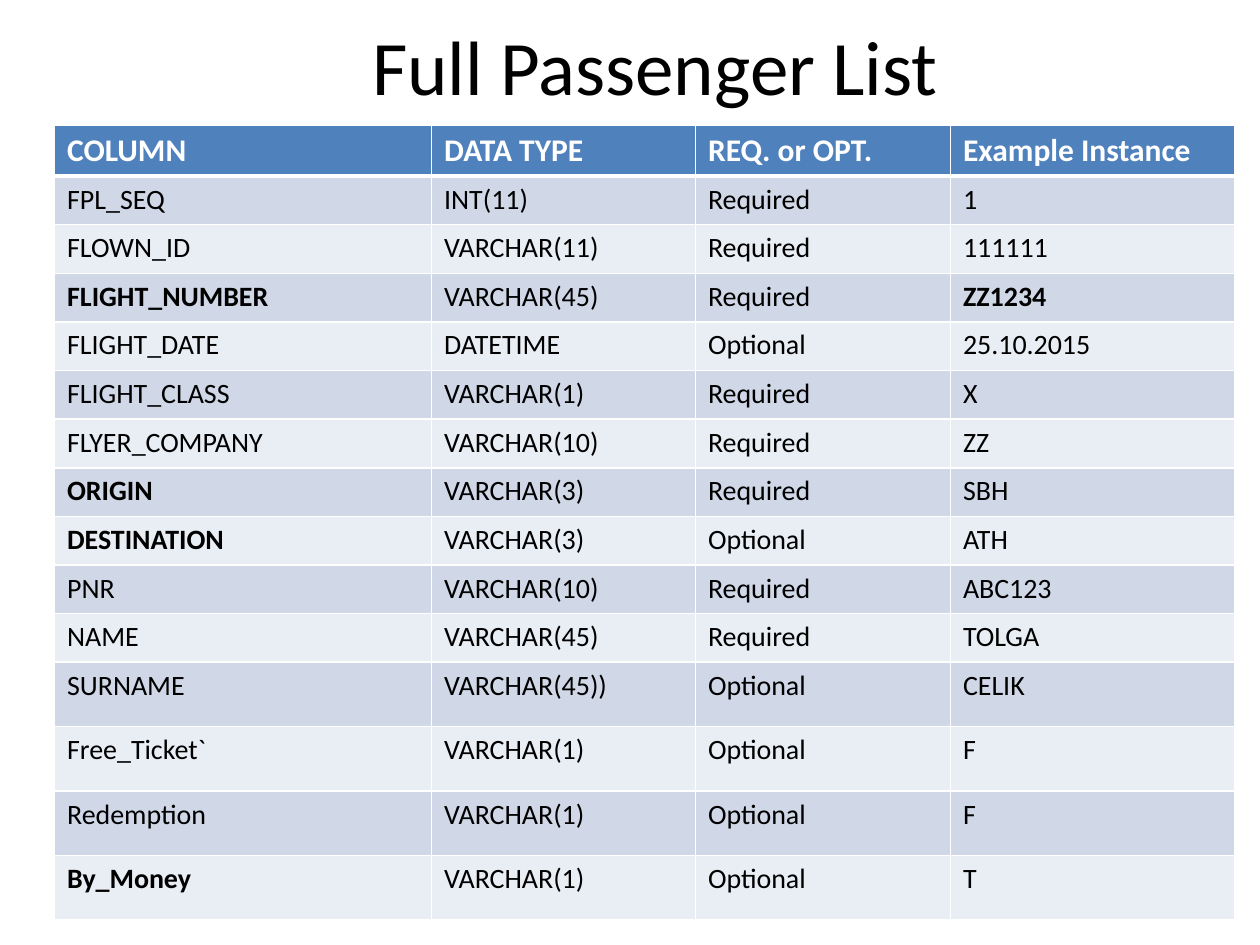
from collections import namedtuple
from dataclasses import dataclass

from lxml import etree
from pptx import Presentation
from pptx.dml.color import RGBColor
from pptx.enum import text
from pptx.oxml import ns
from pptx.util import Cm, Pt

Box = namedtuple("Box", "left top width height")


@dataclass(frozen=True)
class Theme:
    font: str = "Calibri"
    ink: RGBColor = RGBColor(0, 0, 0)
    paper: RGBColor = RGBColor(255, 255, 255)
    header: RGBColor = RGBColor.from_string("4F81BD")
    bands: tuple = (RGBColor.from_string("E9EDF4"), RGBColor.from_string("D0D8E8"))
    title_size: Pt = Pt(44)
    header_size: Pt = Pt(18)
    body_size: Pt = Pt(16)
    header_rule: Pt = Pt(3)


THEME = Theme()
TITLE_BOX = Box(Cm(2.49), Cm(0), Cm(21.44), Cm(2.62))
TABLE_BOX = Box(Cm(1.1), Cm(2.52), Cm(23.8), Cm(16))
COLUMN_SHARES = (7.6, 5.32, 5.14, 5.74)
SHORT_ROW, TALL_ROW = Cm(0.98), Cm(1.3)
TALL_FIELDS = {"SURNAME", "Free_Ticket`", "Redemption", "By_Money"}
BOLD_VALUES = {"FLIGHT_NUMBER", "ZZ1234", "ORIGIN", "DESTINATION", "By_Money"}

HEADINGS = ("COLUMN", "DATA TYPE", "REQ. or OPT.", "Example Instance")
FIELDS = (
    ("FPL_SEQ", "INT(11)", "Required", "1"),
    ("FLOWN_ID", "VARCHAR(11)", "Required", "111111"),
    ("FLIGHT_NUMBER", "VARCHAR(45)", "Required", "ZZ1234"),
    ("FLIGHT_DATE", "DATETIME", "Optional", "25.10.2015"),
    ("FLIGHT_CLASS", "VARCHAR(1)", "Required", "X"),
    ("FLYER_COMPANY", "VARCHAR(10)", "Required", "ZZ"),
    ("ORIGIN", "VARCHAR(3)", "Required", "SBH"),
    ("DESTINATION", "VARCHAR(3)", "Optional", "ATH"),
    ("PNR", "VARCHAR(10)", "Required", "ABC123"),
    ("NAME", "VARCHAR(45)", "Required", "TOLGA"),
    ("SURNAME", "VARCHAR(45))", "Optional", "CELIK"),
    ("Free_Ticket`", "VARCHAR(1)", "Optional", "F"),
    ("Redemption", "VARCHAR(1)", "Optional", "F"),
    ("By_Money", "VARCHAR(1)", "Optional", "T"),
)


def style_paragraph(para, size, color, bold=False):
    para.font.name = THEME.font
    para.font.size = size
    para.font.bold = bold
    para.font.color.rgb = color


def fill_cell(cell, value, fill, size, color, bold):
    cell.text = value
    cell.fill.solid()
    cell.fill.fore_color.rgb = fill
    style_paragraph(cell.text_frame.paragraphs[0], size, color, bold)


def rule_below(cell, width, color):
    line = etree.Element(ns.qn("a:lnB"), w=str(int(width)))
    fill = etree.SubElement(line, ns.qn("a:solidFill"))
    etree.SubElement(fill, ns.qn("a:srgbClr"), val=str(color))
    cell._tc.get_or_add_tcPr().insert(0, line)


def place_title(page, box, wording):
    title = page.shapes.title
    title.left, title.top, title.width, title.height = box
    title.text_frame.text = wording
    title.text_frame.vertical_anchor = text.MSO_ANCHOR.MIDDLE
    para = title.text_frame.paragraphs[0]
    para.alignment = text.PP_ALIGN.CENTER
    style_paragraph(para, THEME.title_size, THEME.ink)


def place_field_table(page, box):
    table = page.shapes.add_table(len(FIELDS) + 1, len(HEADINGS), *box).table
    for column, share in zip(table.columns, COLUMN_SHARES):
        column.width = int(box.width * share / sum(COLUMN_SHARES))

    table.rows[0].height = SHORT_ROW
    for cell, heading in zip(table.rows[0].cells, HEADINGS):
        fill_cell(cell, heading, THEME.header, THEME.header_size, THEME.paper, True)
        rule_below(cell, THEME.header_rule, THEME.paper)

    for number, field in enumerate(FIELDS, start=1):
        row = table.rows[number]
        row.height = TALL_ROW if field[0] in TALL_FIELDS else SHORT_ROW
        for cell, value in zip(row.cells, field):
            fill_cell(cell, value, THEME.bands[number % 2], THEME.body_size,
                      THEME.ink, value in BOLD_VALUES)


def main():
    deck = Presentation()
    deck.slide_width, deck.slide_height = Cm(25.4), Cm(19.05)
    page = deck.slides.add_slide(deck.slide_layouts.get_by_name("Title Only"))
    place_title(page, TITLE_BOX, "Full Passenger List")
    place_field_table(page, TABLE_BOX)
    deck.save("out.pptx")


if __name__ == "__main__":
    main()
